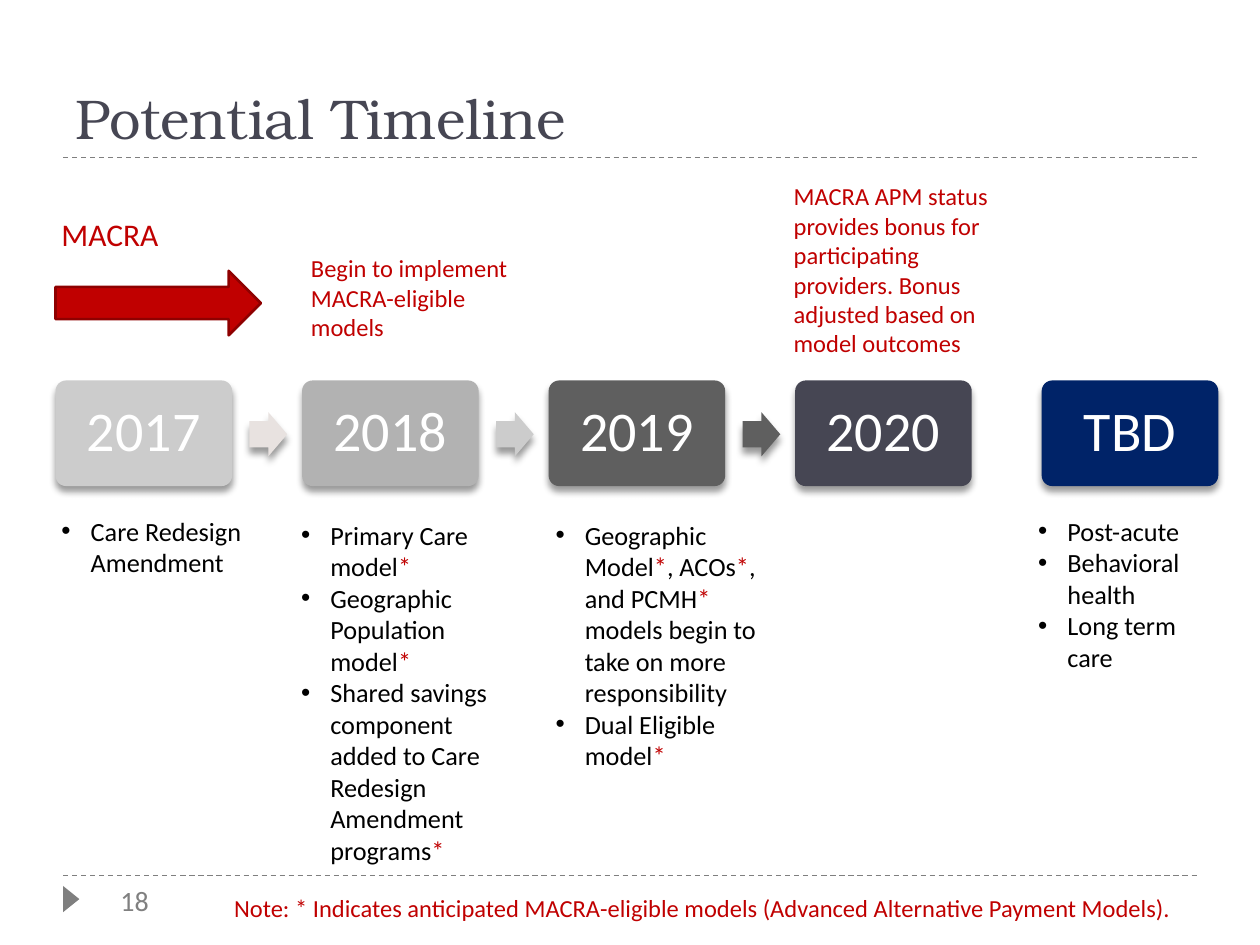
"""Build the Potential Timeline slide."""
import dataclasses
import typing

import lxml.etree
import pptx
import pptx.dml.color
import pptx.enum.dml
import pptx.enum.shapes
import pptx.enum.text
import pptx.oxml
import pptx.oxml.ns
import pptx.util

Cm = pptx.util.Cm
Preset = pptx.enum.shapes.MSO_SHAPE
Align = pptx.enum.text.PP_ALIGN
Anchor = pptx.enum.text.MSO_ANCHOR


@dataclasses.dataclass(frozen=True)
class Theme:
    body: str = "Calibri"
    heading: str = "TeX Gyre Bonum"
    ink: str = "000000"
    slate: str = "464653"
    red: str = "C00000"
    dark_red: str = "8E0000"
    grey: str = "7F7F7F"
    number_grey: str = "808080"
    white: str = "FFFFFF"
    display: int = 32
    label: int = 18
    number: int = 16
    bullet: int = 15
    note: int = 14


class Box(typing.NamedTuple):
    left: float
    top: float
    width: float
    height: float

    def lengths(self) -> list:
        return [Cm(value) for value in self]


class Stage(typing.NamedTuple):
    name: str
    fill: str
    arrow_fill: typing.Optional[str] = None


class Plan(typing.NamedTuple):
    box: Box
    items: tuple


class Remark(typing.NamedTuple):
    box: Box
    text: str
    size: int
    color: str
    wrap: bool = True


THEME = Theme()
STAGE_PITCH = 4.97
FIRST_STAGE = Box(1.12, 7.67, 3.56, 2.13)
FIRST_ARROW = Box(5.03, 8.31, 0.76, 0.89)
BULLET_INDENT = Cm(0.59)

STAGES = (
    Stage("2017", "CCCCCC", "E8E2E0"),
    Stage("2018", "B2B2B2", "CCCCCC"),
    Stage("2019", "5F5F5F", "5F5F5F"),
    Stage("2020", THEME.slate),
    Stage("TBD", "002368"),
)
PLANS = (
    Plan(Box(0.99, 10.26, 4.62, 1.55), ("Care Redesign Amendment",)),
    Plan(Box(5.82, 10.34, 4.95, 7.32), (
        "Primary Care model*",
        "Geographic Population model*",
        "Shared savings component added to Care Redesign Amendment programs*",
    )),
    Plan(Box(10.95, 10.34, 5.08, 6.02), (
        "Geographic Model*, ACOs*, and PCMH* models begin to take on more responsibility",
        "Dual Eligible model*",
    )),
    Plan(Box(20.68, 10.26, 3.86, 3.4), ("Post-acute", "Behavioral health", "Long term care")),
)
REMARKS = (
    Remark(Box(15.75, 3.53, 4.83, 3.84),
           "MACRA APM status provides bonus for participating providers. "
           "Bonus adjusted based on model outcomes", THEME.note, THEME.red),
    Remark(Box(4.47, 17.88, 22.58, 1.1),
           "Note: * Indicates anticipated MACRA-eligible models "
           "(Advanced Alternative Payment Models).", THEME.note, THEME.red),
    Remark(Box(6.02, 4.98, 4.83, 2.06),
           "Begin to implement MACRA-eligible models", THEME.note, THEME.red),
    Remark(Box(0.99, 4.22, 2.87, 1.02), "MACRA", THEME.label, THEME.red, False),
    Remark(Box(2.18, 17.68, 1.19, 0.94), "18", THEME.number, THEME.number_grey, False),
)


def rgb(color: str) -> pptx.dml.color.RGBColor:
    return pptx.dml.color.RGBColor.from_string(color)


def write(paragraph, text: str, *, size: int, color: str, font: str = THEME.body,
          align=Align.LEFT) -> None:
    """Add one formatted run to a paragraph."""
    paragraph.alignment = align
    run = paragraph.add_run()
    run.text = text
    run.font.size = pptx.util.Pt(size)
    run.font.name = font
    run.font.color.rgb = rgb(color)


def add_bullet(paragraph) -> None:
    """Give a paragraph a hanging round bullet."""
    properties = paragraph._p.get_or_add_pPr()
    properties.set("marL", str(BULLET_INDENT))
    properties.set("indent", str(-BULLET_INDENT))
    for tag, key, value in (("a:buFont", "typeface", "Arial"), ("a:buChar", "char", "•")):
        lxml.etree.SubElement(properties, pptx.oxml.ns.qn(tag)).set(key, value)


def add_soft_shadow(shape) -> None:
    """Put a soft shadow below a shape."""
    shape.shadow.inherit = False
    effects = shape._element.spPr.find(pptx.oxml.ns.qn("a:effectLst"))
    effects.append(pptx.oxml.parse_xml(
        f'<a:outerShdw {pptx.oxml.ns.nsdecls("a")} blurRad="50800" dist="43180" '
        'dir="5400000" rotWithShape="0"><a:srgbClr val="000000">'
        '<a:alpha val="40000"/></a:srgbClr></a:outerShdw>'))


def draw_shape(slide, preset, box: Box, fill: str, adjustments: tuple = ()):
    shape = slide.shapes.add_shape(preset, *box.lengths())
    shape.shadow.inherit = False
    shape.fill.solid()
    shape.fill.fore_color.rgb = rgb(fill)
    shape.line.fill.background()
    for index, value in enumerate(adjustments):
        shape.adjustments[index] = value
    return shape


def draw_rule(slide, top: float) -> None:
    rule = slide.shapes.add_connector(pptx.enum.shapes.MSO_CONNECTOR.STRAIGHT,
                                      Cm(1.27), Cm(top), Cm(24.13), Cm(top))
    rule.line.color.rgb = rgb(THEME.grey)
    rule.line.width = pptx.util.Pt(0.75)
    rule.line.dash_style = pptx.enum.dml.MSO_LINE.DASH
    lxml.etree.SubElement(rule._element.spPr, pptx.oxml.ns.qn("a:effectLst"))


def draw_title(slide, text: str) -> None:
    title = slide.shapes.title
    title.left, title.top, title.width, title.height = Box(1.27, 0.43, 22.86, 2.74).lengths()
    frame = title.text_frame
    frame.auto_size = pptx.enum.text.MSO_AUTO_SIZE.NONE
    frame.vertical_anchor = Anchor.BOTTOM
    write(frame.paragraphs[0], text, size=THEME.display, color=THEME.slate, font=THEME.heading)


def draw_stage(slide, stage: Stage, offset: float) -> None:
    card = draw_shape(slide, Preset.ROUNDED_RECTANGLE,
                      FIRST_STAGE._replace(left=FIRST_STAGE.left + offset), stage.fill, (0.1,))
    add_soft_shadow(card)
    card.text_frame.vertical_anchor = Anchor.MIDDLE
    label = card.text_frame.paragraphs[0]
    label.line_spacing = 0.9
    write(label, stage.name, size=THEME.display, color=THEME.white, align=Align.CENTER)
    if stage.arrow_fill:
        arrow = draw_shape(slide, Preset.RIGHT_ARROW,
                           FIRST_ARROW._replace(left=FIRST_ARROW.left + offset),
                           stage.arrow_fill, (0.6, 0.5))
        add_soft_shadow(arrow)


def draw_plan(slide, plan: Plan) -> None:
    """Draw a bulleted list with red asterisks."""
    frame = slide.shapes.add_textbox(*plan.box.lengths()).text_frame
    frame.word_wrap = True
    for index, item in enumerate(plan.items):
        paragraph = frame.add_paragraph() if index else frame.paragraphs[0]
        add_bullet(paragraph)
        for position, piece in enumerate(item.split("*")):
            if position:
                write(paragraph, "*", size=THEME.bullet, color=THEME.red)
            if piece:
                write(paragraph, piece, size=THEME.bullet, color=THEME.ink)


def draw_remark(slide, remark: Remark) -> None:
    frame = slide.shapes.add_textbox(*remark.box.lengths()).text_frame
    frame.word_wrap = remark.wrap
    write(frame.paragraphs[0], remark.text, size=remark.size, color=remark.color)


def main() -> None:
    deck = pptx.Presentation()
    deck.slide_width, deck.slide_height = Cm(25.4), Cm(19.05)
    slide = deck.slides.add_slide(deck.slide_layouts.get_by_name("Title Only"))
    for top in (17.65, 3.18):
        draw_rule(slide, top)
    marker = draw_shape(slide, Preset.ISOSCELES_TRIANGLE, Box(1.17, 17.96, 0.53, 0.33), THEME.grey)
    marker.rotation = 90
    draw_title(slide, "Potential Timeline")
    for plan in PLANS:
        draw_plan(slide, plan)
    for index, stage in enumerate(STAGES):
        draw_stage(slide, stage, index * STAGE_PITCH)
    for remark in REMARKS:
        draw_remark(slide, remark)
    macra_arrow = draw_shape(slide, Preset.RIGHT_ARROW, Box(1.12, 5.46, 4.14, 1.3), THEME.red)
    macra_arrow.line.color.rgb = rgb(THEME.dark_red)
    macra_arrow.line.width = pptx.util.Pt(1.5)
    deck.save("out.pptx")


if __name__ == "__main__":
    main()
